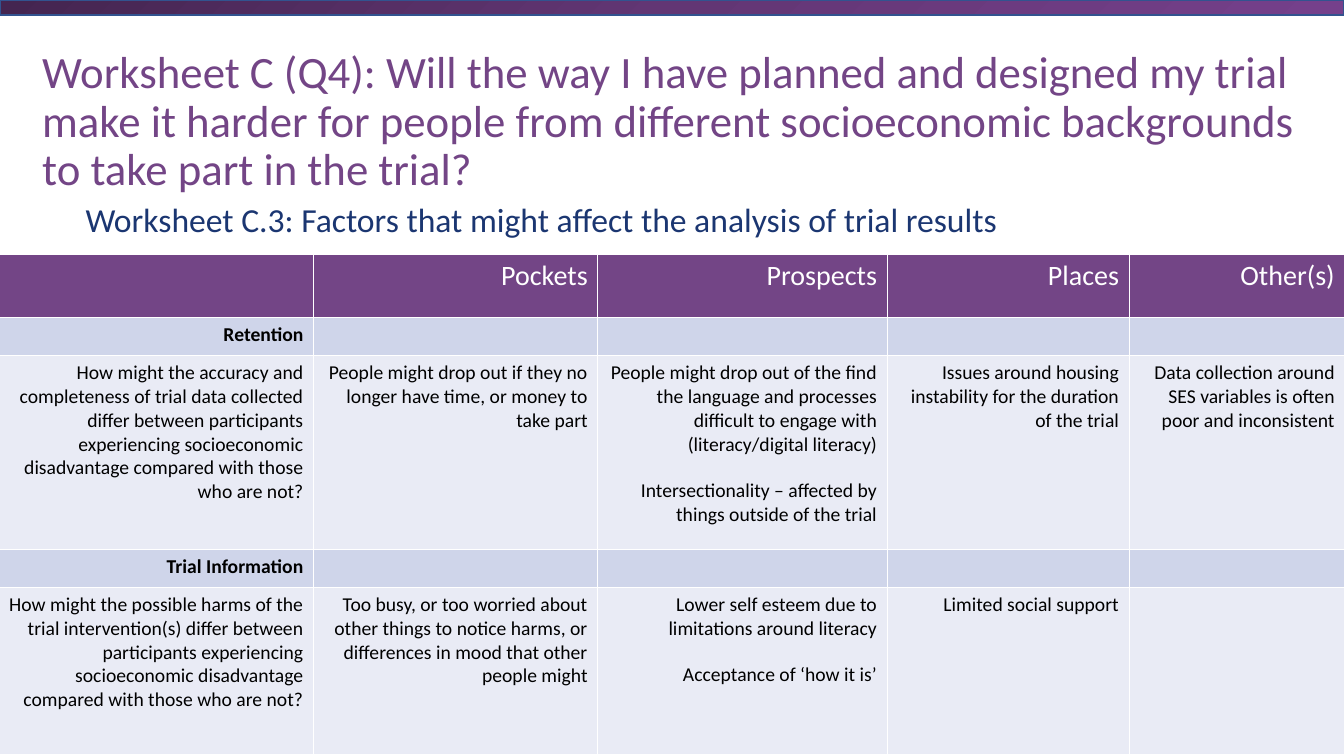
"""Build the Worksheet C.3 slide on factors affecting trial results."""
import copy
from dataclasses import dataclass

import lxml.etree
import pptx
import pptx.dml.color
import pptx.enum.shapes
import pptx.enum.text
import pptx.oxml.ns
import pptx.util

Inches = pptx.util.Inches
qn = pptx.oxml.ns.qn
FONT = "Calibri"
PURPLE = "734586"
WHITE = "FFFFFF"
WIDTHS = [3.13, 2.82, 2.87, 2.4, 2.14]


@dataclass
class Label:
    text: str
    box: tuple[float, float, float, float]
    size: int
    shade: str
    space: float = 1.0
    middle: bool = False


@dataclass
class Row:
    height: float
    fill: str
    cells: list[str]
    size: int = 14
    shade: str = "000000"
    bold: bool = False


LABELS = [
    Label("Worksheet C.3: Factors that might affect the analysis of trial results",
          (0.75, 1.92, 12.27, 0.5), 24, "1B3671"),
    Label("Worksheet C (Q4): Will the way I have planned and designed my trial make it "
          "harder for people from different socioeconomic backgrounds to take part in the trial?",
          (0.32, 0.49, 12.68, 1.45), 32, PURPLE, 0.9, True),
]

ROWS = [
    Row(0.63, PURPLE, ["", "Pockets", "Prospects", "Places", "Other(s)"], 20, WHITE),
    Row(0.38, "CFD5EA", ["Retention", "", "", "", ""], bold=True),
    Row(1.92, "E9EBF5", [
        "How might the accuracy and completeness of trial data collected differ between "
        "participants experiencing socioeconomic disadvantage compared with those who are not?",
        "People might drop out if they no longer have time, or money to take part",
        "People might drop out of the find the language and processes difficult to engage "
        "with (literacy/digital literacy)\n"
        "Intersectionality – affected by things outside of the trial",
        "Issues around housing instability for the duration of the trial",
        "Data collection around SES variables is often poor and inconsistent"]),
    Row(0.38, "CFD5EA", ["Trial Information", "", "", "", ""], bold=True),
    Row(1.66, "E9EBF5", [
        "How might the possible harms of the trial intervention(s) differ between participants "
        "experiencing socioeconomic disadvantage compared with those who are not?",
        "Too busy, or too worried about other things to notice harms, or differences in mood "
        "that other people might",
        "Lower self esteem due to limitations around literacy\nAcceptance of ‘how it is’",
        "Limited social support", ""]),
]


def tint(code: str) -> pptx.dml.color.RGBColor:
    return pptx.dml.color.RGBColor.from_string(code)


def style(par, size: int, shade: str, bold: bool = False) -> None:
    for run in par.runs:
        run.font.name = FONT
        run.font.size = pptx.util.Pt(size)
        run.font.bold = bold
        run.font.color.rgb = tint(shade)
    if not par.runs:
        lxml.etree.SubElement(par._p, qn("a:endParaRPr"), sz=str(size * 100))


def draw_bar(slide) -> None:
    bar = slide.shapes.add_shape(pptx.enum.shapes.MSO_SHAPE.RECTANGLE,
                                 0, 0, Inches(13.33), Inches(0.15))
    bar.shadow.inherit = False
    bar.line.color.rgb = tint("32538F")
    bar.line.width = pptx.util.Pt(1)
    bar.fill.gradient()
    bar.fill.gradient_angle = 315
    stops = bar.element.find(".//" + qn("a:gsLst"))
    stops.insert(1, copy.deepcopy(stops[0]))
    shades = ["442550", "623674", "75408B"]
    for i, (stop, shade) in enumerate(zip(bar.fill.gradient_stops, shades)):
        stop.position = i / 2
        stop.color.rgb = tint(shade)


def draw_label(slide, label: Label) -> None:
    frame = slide.shapes.add_textbox(*map(Inches, label.box)).text_frame
    frame.word_wrap = True
    if label.middle:
        frame.vertical_anchor = pptx.enum.text.MSO_ANCHOR.MIDDLE
    frame.text = label.text
    frame.paragraphs[0].line_spacing = label.space
    style(frame.paragraphs[0], label.size, label.shade)


def edge(cell) -> None:
    props = cell._tc.get_or_add_tcPr()
    for side in ("lnL", "lnR", "lnT", "lnB"):
        line = lxml.etree.SubElement(props, qn("a:" + side), w="12700")
        fill = lxml.etree.SubElement(line, qn("a:solidFill"))
        lxml.etree.SubElement(fill, qn("a:srgbClr"), val=WHITE)


def draw_cell(cell, text: str, row: Row) -> None:
    edge(cell)
    cell.fill.solid()
    cell.fill.fore_color.rgb = tint(row.fill)
    cell.text_frame.text = text
    for i, par in enumerate(cell.text_frame.paragraphs):
        par.alignment = pptx.enum.text.PP_ALIGN.RIGHT
        if i:
            par.space_before = pptx.util.Pt(16)
        style(par, row.size, row.shade, row.bold)


def draw_table(slide) -> None:
    table = slide.shapes.add_table(len(ROWS), len(WIDTHS), Inches(-0.02), Inches(2.52),
                                   Inches(sum(WIDTHS)),
                                   Inches(sum(row.height for row in ROWS))).table
    table.first_row = table.horz_banding = False
    for col, width in zip(table.columns, WIDTHS):
        col.width = Inches(width)
    for r, row in enumerate(ROWS):
        table.rows[r].height = Inches(row.height)
        for c, text in enumerate(row.cells):
            draw_cell(table.cell(r, c), text, row)


def main() -> None:
    deck = pptx.Presentation()
    deck.slide_width, deck.slide_height = Inches(13.33), Inches(7.5)
    slide = deck.slides.add_slide(deck.slide_layouts[6])
    draw_bar(slide)
    for label in LABELS:
        draw_label(slide, label)
    draw_table(slide)
    deck.save("out.pptx")


if __name__ == "__main__":
    main()
